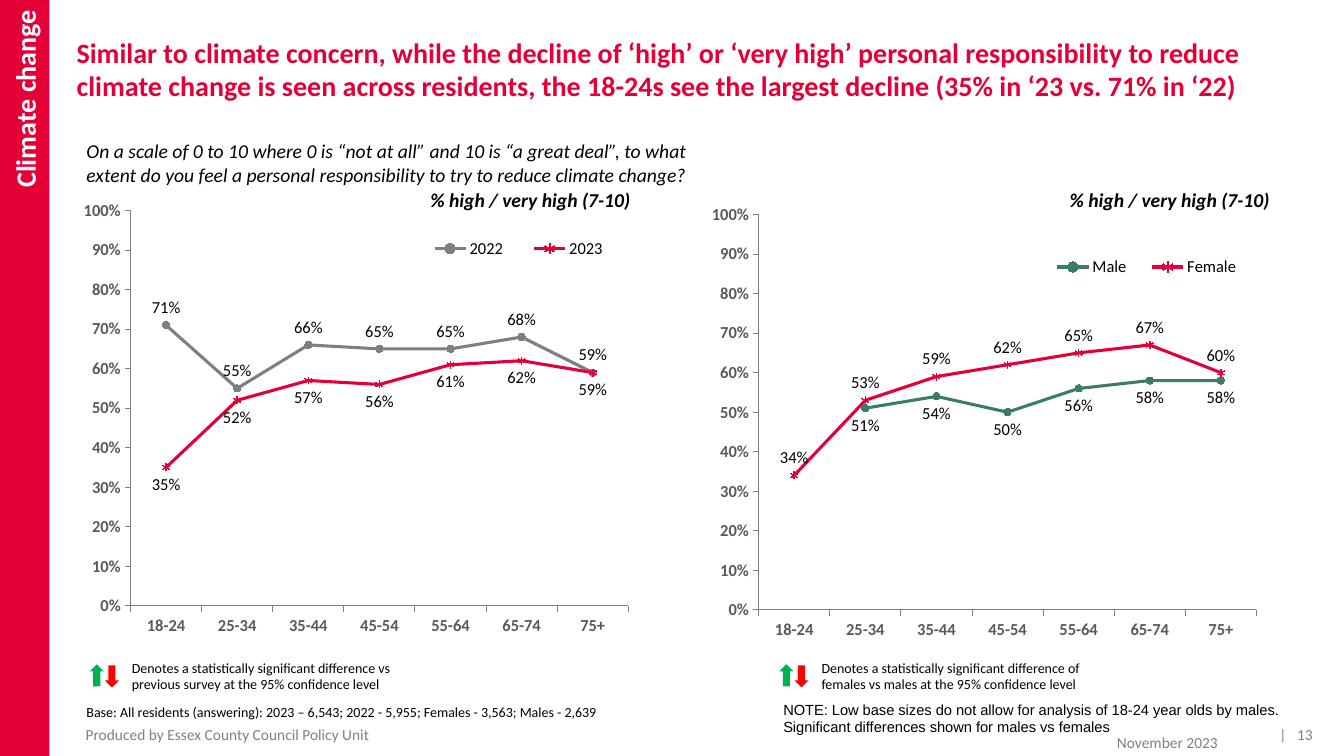
from dataclasses import dataclass

from lxml import etree
from pptx import Presentation
from pptx import util as u
from pptx.chart import data
from pptx.dml.color import RGBColor
from pptx.enum import chart as ch, shapes, text
from pptx.oxml import ns, parse_xml

PX = 9144  # EMU in one px, 100 px to the inch


@dataclass(frozen=True)
class Theme:
    face: str = "Calibri"
    plain: str = "Arial"
    brand: str = "E40037"
    ink: str = "000000"
    white: str = "FFFFFF"
    grey: str = "808080"
    past: str = "7F7F7F"
    axis: str = "595959"
    male: str = "3A7D64"
    up: str = "00B050"
    down: str = "FF0000"
    head: float = 20
    lead: float = 14
    label: float = 12
    foot: float = 11
    note: float = 10.5
    small: float = 10


def px(*nums):
    return [u.Emu(n * PX) for n in nums]


def rgb(code):
    return RGBColor.from_string(code)


def put(item, **vals):
    for name, val in vals.items():
        setattr(item, name, val)


class Deck:
    def __init__(self, theme):
        self.theme = theme
        self.show = Presentation()
        put(self.show, slide_width=u.Inches(13.33), slide_height=u.Inches(7.5))
        self.slide = self.show.slides.add_slide(self.show.slide_layouts[5])

    def font(self, font, size, color=None, face=None, **style):
        put(font, size=u.Pt(size), name=face or self.theme.face, **style)
        font.color.rgb = rgb(color or self.theme.ink)

    def say(self, shape, words, size, color=None, pad=(10, 5, 10, 5),
            side="LEFT", fix="TOP", before=0, **style):
        """Fill a shape with one paragraph; pad is left, top, right, bottom."""
        frame = shape.text_frame
        sides = ("margin_left", "margin_top", "margin_right", "margin_bottom")
        put(frame, word_wrap=True, auto_size=text.MSO_AUTO_SIZE.NONE,
            vertical_anchor=getattr(text.MSO_ANCHOR, fix), **dict(zip(sides, px(*pad))))
        para = frame.paragraphs[0]
        put(para, alignment=getattr(text.PP_ALIGN, side), space_before=u.Pt(before))
        run = para.add_run()
        run.text = words
        self.font(run.font, size, color, **style)

    def title(self, box, words):
        shape = self.slide.shapes.title
        put(shape, **dict(zip(("left", "top", "width", "height"), px(*box))))
        self.say(shape, words, self.theme.head, self.theme.brand,
                 pad=(0, 0, 0, 0), bold=True)

    def text(self, box, words, size, color=None, **form):
        self.say(self.slide.shapes.add_textbox(*px(*box)), words, size, color, **form)

    def shape(self, kind, box, color):
        shape = self.slide.shapes.add_shape(kind, *px(*box))
        shape.shadow.inherit = False
        shape.fill.solid()
        shape.fill.fore_color.rgb = rgb(color)
        shape.line.fill.background()
        return shape

    def banner(self, box, words):
        shape = self.shape(shapes.MSO_SHAPE.RECTANGLE, box, self.theme.brand)
        self.say(shape, words, self.theme.head, self.theme.white,
                 pad=(10, 10, 10, 5), side="RIGHT", fix="MIDDLE", bold=True)
        shape.element.find(".//" + ns.qn("a:bodyPr")).set("vert", "vert270")

    def key(self, left, words):
        """Pair of arrows with the sentence that explains them."""
        kinds = shapes.MSO_SHAPE
        self.shape(kinds.UP_ARROW, (left, 659, 14, 22), self.theme.up)
        self.shape(kinds.DOWN_ARROW, (left + 15, 660, 14, 22), self.theme.down)
        self.text((left + 32, 649, 296, 44), words, self.theme.small)

    def place(self, owner, after, inner=False, **parts):
        """Give a plot or legend a fixed place, as shares of the chart."""
        for old in owner.findall(ns.qn("c:layout")):
            owner.remove(old)
        layout = etree.Element(ns.qn("c:layout"))
        spot = etree.SubElement(layout, ns.qn("c:manualLayout"))
        vals = {"layoutTarget": "inner"} if inner else {}
        vals |= {"xMode": "edge", "yMode": "edge"} | parts
        for name, val in vals.items():
            etree.SubElement(spot, ns.qn("c:" + name)).set("val", str(val))
        if after is None:
            owner.insert(0, layout)
        else:
            after.addnext(layout)

    def frame(self, label, color):
        """Draw a coloured box round one data label."""
        node = label._get_or_add_dLbl()
        node.find(ns.qn("c:idx")).addnext(parse_xml(
            f'<c:spPr {ns.nsdecls("c", "a")}><a:noFill/><a:ln w="19050"><a:solidFill>'
            f'<a:srgbClr val="{color}"/></a:solidFill></a:ln></c:spPr>'))

    def scale(self, axis):
        put(axis, has_major_gridlines=False, major_tick_mark=ch.XL_TICK_MARK.OUTSIDE,
            minor_tick_mark=ch.XL_TICK_MARK.NONE)
        self.font(axis.tick_labels.font, self.theme.label, self.theme.axis, bold=True)
        axis.format.line.width = u.Pt(0.75)
        axis.format.line.color.rgb = rgb(self.theme.grey)

    def line(self, row, color, mark, spot, boxed=(), edge=None):
        """Style one series; boxed lists the points with a framed label."""
        row.smooth = False
        row.format.line.width = u.Pt(2.25)
        row.format.line.color.rgb = rgb(color)
        put(row.marker, style=getattr(ch.XL_MARKER_STYLE, mark), size=5)
        row.marker.format.fill.solid()
        row.marker.format.fill.fore_color.rgb = rgb(color)
        row.marker.format.line.color.rgb = rgb(color)
        place = getattr(ch.XL_LABEL_POSITION, spot)
        put(row.data_labels, show_value=True, position=place,
            number_format="0%", number_format_is_linked=False)
        self.font(row.data_labels.font, self.theme.label)
        for num in boxed:
            label = row.points[num].data_label
            self.font(label.font, self.theme.label)
            label.position = place
            self.frame(label, edge)

    def chart(self, box, ages, rows, legend):
        """Each row is a name, its percentages and its style."""
        source = data.CategoryChartData(number_format="0%")
        source.categories = ages
        for name, nums, _ in rows:
            source.add_series(name, [n and n / 100 for n in nums])
        chart = self.slide.shapes.add_chart(
            ch.XL_CHART_TYPE.LINE_MARKERS, *px(*box), source).chart
        put(chart, has_title=False, has_legend=True)
        self.font(chart.font, self.theme.small)
        put(chart.legend, position=ch.XL_LEGEND_POSITION.RIGHT, include_in_layout=False)
        self.font(chart.legend.font, self.theme.label)
        for axis in (chart.category_axis, chart.value_axis):
            self.scale(axis)
        put(chart.value_axis, minimum_scale=0, maximum_scale=1, major_unit=0.1)
        put(chart.value_axis.tick_labels, number_format="0%", number_format_is_linked=False)
        plot = chart.plots[0]
        plot.vary_by_categories = False
        for row, (_, _, style) in zip(plot.series, rows):
            self.line(row, **style)
        area = chart._chartSpace.find(".//" + ns.qn("c:plotArea"))
        self.place(area, None, inner=True, x=0.06, y=0.02, w=0.84, h=0.83)
        node = area.getparent().find(ns.qn("c:legend"))
        self.place(node, node.find(ns.qn("c:legendPos")), **legend)


def main():
    look = Theme()
    deck = Deck(look)
    ages = ["18-24", "25-34", "35-44", "45-54", "55-64", "65-74", "75+"]
    deck.title((76, 35, 1234, 108), "Similar to climate concern, while the decline of ‘high’ or ‘very high’ personal responsibility to reduce climate change is seen across residents, the 18-24s see the largest decline (35% in ‘23 vs. 71% in ‘22)")
    deck.banner((0, 0, 49, 750), "Climate change")
    deck.chart((83, 199, 599, 473), ages, [
        ("2022", [71, 55, 66, 65, 65, 68, 59],
         dict(color=look.past, mark="CIRCLE", spot="ABOVE")),
        ("2023", [35, 52, 57, 56, 61, 62, 59],
         dict(color=look.brand, mark="STAR", spot="BELOW",
              boxed=range(len(ages)), edge=look.down)),
    ], dict(x=0.53, y=0.06, w=0.37, h=0.08))
    deck.chart((706, 203, 599, 473), ages, [
        ("Male", [None, 51, 54, 50, 56, 58, 58],
         dict(color=look.male, mark="CIRCLE", spot="BELOW")),
        ("Female", [34, 53, 59, 62, 65, 67, 60],
         dict(color=look.brand, mark="STAR", spot="ABOVE",
              boxed=(3, 4, 5), edge=look.up)),
    ], dict(x=0.53, y=0.09, w=0.37, h=0.08))
    deck.text((76, 133, 664, 57), "On a scale of 0 to 10 where 0 is “not at all” and 10 is “a great deal”, to what extent do you feel a personal responsibility to try to reduce climate change?", look.lead, italic=True)
    for left in (417, 1051):
        deck.text((left, 182, 283, 34), "% high / very high (7-10)", look.lead,
                  before=6, bold=True, italic=True)
    deck.key(89, "Denotes a statistically significant difference vs previous survey at the 95% confidence level")
    deck.key(773, "Denotes a statistically significant difference of females vs males at the 95% confidence level")
    deck.text((76, 693, 613, 27), "Base: All residents (answering): 2023 – 6,543; 2022 - 5,955; Females - 3,563; Males - 2,639", look.small)
    deck.text((767, 690, 535, 45), "NOTE: Low base sizes do not allow for analysis of 18-24 year olds by males. Significant differences shown for males vs females", look.note, face=look.plain)
    deck.text((76, 721, 654, 15), "Produced by Essex County Council Policy Unit",
              look.foot, look.grey, pad=(9, 5, 10, 5), fix="MIDDLE")
    for box, words in (((968, 729, 240, 15), "November 2023"),
                       ((1217, 721, 85, 15), "|   13")):
        deck.text(box, words, look.foot, look.grey, pad=(10, 5, 0, 5),
                  side="RIGHT", fix="MIDDLE")
    deck.show.save("out.pptx")


if __name__ == "__main__":
    main()
